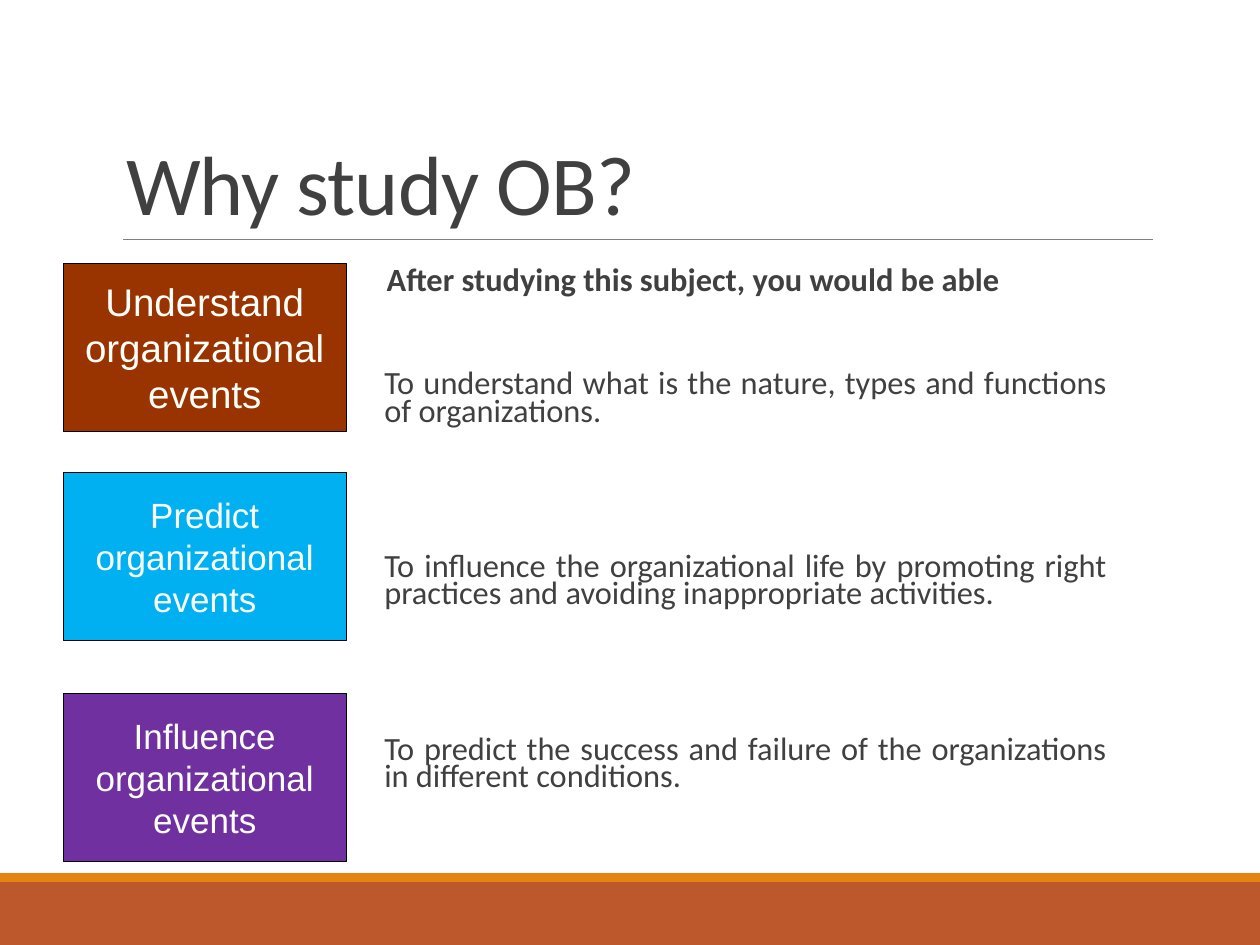
"""Build the slide on why to study organizational behaviour."""
from lxml import etree
from pptx import Presentation
from pptx.dml.color import RGBColor
from pptx.enum import shapes, text
from pptx.oxml import ns
from pptx.util import Pt


def color(value):
    return RGBColor.from_string(value)


def style(para, font, size, value, bold=False):
    for span in para.runs:
        span.font.name = font
        span.font.size = Pt(size)
        span.font.bold = bold
        span.font.color.rgb = color(value)


deck = Presentation()
deck.slide_width, deck.slide_height = Pt(720), Pt(540)
page = deck.slides.add_slide(deck.slide_layouts[1])

for top, height, fill in [(504, 36, "BD582C"), (499, 5, "E48312")]:
    band = page.shapes.add_shape(shapes.MSO_SHAPE.RECTANGLE, 0, Pt(top), Pt(720), Pt(height))
    band.shadow.inherit = False
    band.fill.solid()
    band.fill.fore_color.rgb = color(fill)
    band.line.fill.background()

rule = page.shapes.add_connector(
    shapes.MSO_CONNECTOR.STRAIGHT, Pt(70.5), Pt(136.8), Pt(659), Pt(136.8))
rule.line.color.rgb = color("808080")
rule.line.width = Pt(0.5)
etree.SubElement(rule.element.spPr, ns.qn("a:effectLst"))

title = page.shapes.title
title.left, title.top, title.width, title.height = Pt(64.8), Pt(22.3), Pt(594), Pt(114.5)
frame = title.text_frame
frame.text = "Why study OB?"
frame.auto_size = text.MSO_AUTO_SIZE.NONE
frame.vertical_anchor = text.MSO_ANCHOR.BOTTOM
heading = frame.paragraphs[0]
heading.alignment = text.PP_ALIGN.LEFT
heading.line_spacing = 0.85
style(heading, "Calibri", 48, "404040")
heading.runs[0].font._element.set("spc", "-50")

body = page.placeholders[1]
body.left, body.top, body.width, body.height = Pt(212.4), Pt(150.5), Pt(419.8), Pt(318.2)
frame = body.text_frame
frame.auto_size = text.MSO_AUTO_SIZE.NONE
frame.margin_left = frame.margin_right = 0
goals = [
    ("After studying this subject, you would be able", 0, 8.6),
    ("To understand what is the nature, types and functions of organizations.", 43.6, 7.2),
    ("To influence the organizational life by promoting right practices "
     "and avoiding inappropriate activities.", 73.3, 7.2),
    ("To predict the success and failure of the organizations in different conditions.",
     73.3, 7.2),
]
frame.text = "\n".join(goal[0] for goal in goals)
for index, (para, (_, gap, indent)) in enumerate(zip(frame.paragraphs, goals)):
    para.alignment = text.PP_ALIGN.JUSTIFY if index else text.PP_ALIGN.LEFT
    para.line_spacing = 0.7
    para.space_before, para.space_after = Pt(gap), Pt(0)
    style(para, "Calibri", 18.5, "404040", bold=index == 0)
    properties = para._p.get_or_add_pPr()
    properties.set("marL", str(Pt(indent)))
    properties.set("indent", "0")
    etree.SubElement(properties, ns.qn("a:buNone"))

steps = [
    ("Understand", 150.5, 22, "993300"),
    ("Predict", 270, 20, "00B0F0"),
    ("Influence", 396, 20, "7030A0"),
]
for verb, top, size, fill in steps:
    box = page.shapes.add_shape(
        shapes.MSO_SHAPE.RECTANGLE, Pt(36), Pt(top), Pt(162), Pt(96))
    box.shadow.inherit = False
    box.fill.solid()
    box.fill.fore_color.rgb = color(fill)
    box.line.color.rgb = color("000000")
    box.line.width = Pt(0.5)
    frame = box.text_frame
    frame.text = f"{verb}\norganizational\nevents"
    frame.word_wrap = False
    frame.vertical_anchor = text.MSO_ANCHOR.MIDDLE
    for para in frame.paragraphs:
        para.alignment = text.PP_ALIGN.CENTER
        style(para, "Arial", size, "FCFFF9")

deck.save("out.pptx")
